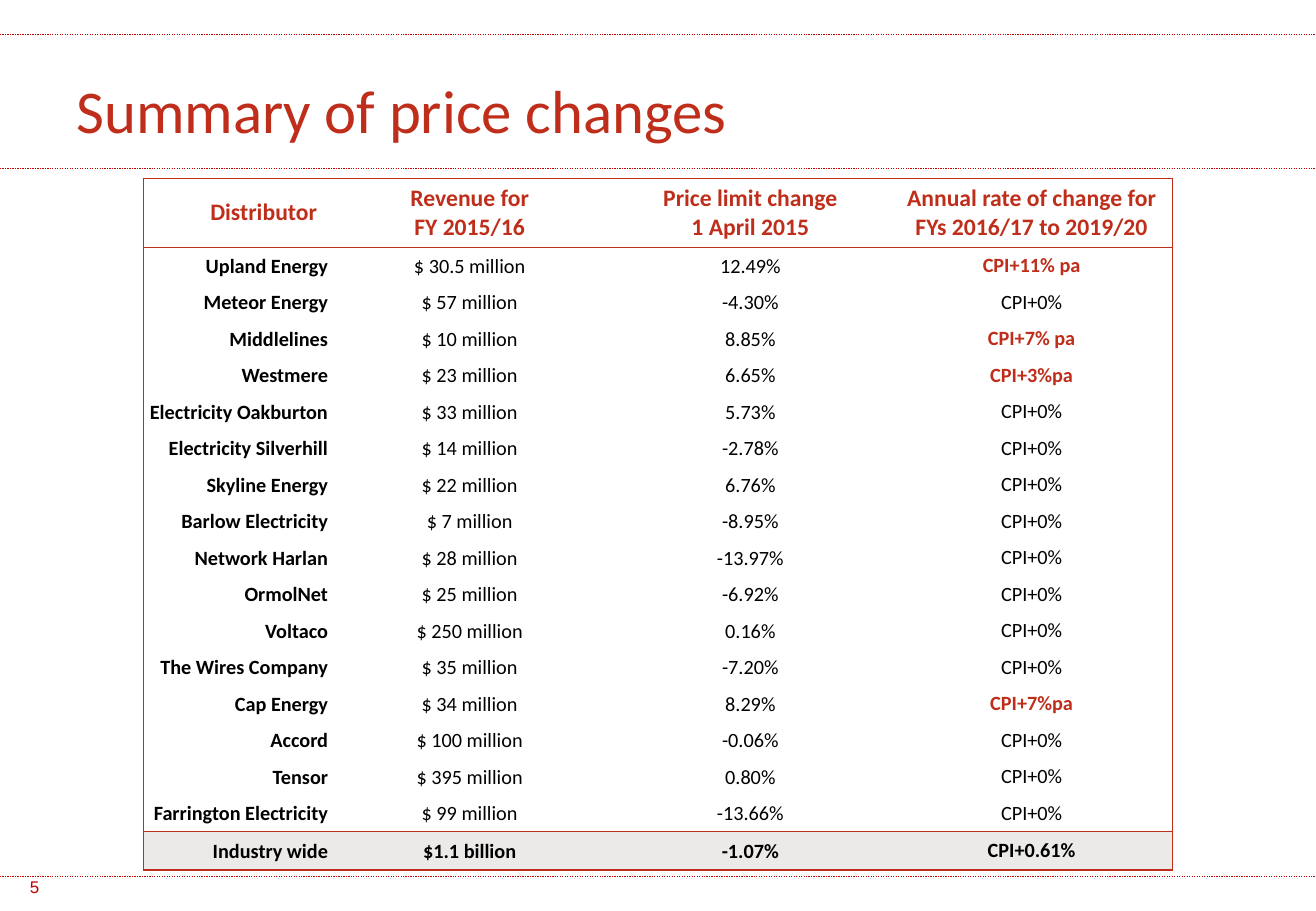
from dataclasses import dataclass

from lxml import etree
from pptx import Presentation
from pptx.dml.color import RGBColor
from pptx.enum.dml import MSO_LINE
from pptx.enum.shapes import MSO_CONNECTOR
from pptx.enum.text import MSO_ANCHOR, PP_ALIGN
from pptx.oxml.ns import qn
from pptx.slide import Slide
from pptx.table import _Cell
from pptx.util import Inches, Length, Pt

LEFT, CENTER, RIGHT = PP_ALIGN.LEFT, PP_ALIGN.CENTER, PP_ALIGN.RIGHT
MIDDLE = MSO_ANCHOR.MIDDLE
DOTTED = MSO_LINE.ROUND_DOT
STRAIGHT = MSO_CONNECTOR.STRAIGHT

ACCENT = RGBColor(0xBF, 0x2E, 0x1A)
RULE = RGBColor(0xC0, 0x00, 0x00)
BLACK = RGBColor(0x00, 0x00, 0x00)
TOTAL_FILL = RGBColor(0xEB, 0xEA, 0xE8)

SLIDE_W, SLIDE_H = Inches(10.83), Inches(7.5)
RULE_ROWS = (3.8, 18.53, 96.2)
COLUMNS = (14.13, 21.33, 21.33, 21.42)
HEADER_H, BODY_H, TOTAL_H = 7.6, 4, 4.27
TABLE_X, TABLE_Y = 10.9, 19.57
TIGHT = {"margin_left": Inches(0.01), "margin_right": Inches(0.01),
         "margin_top": Inches(0.01), "margin_bottom": 0}


@dataclass(frozen=True)
class Label:
    text: str
    x: float
    y: float
    w: float
    h: float
    align: PP_ALIGN
    font: dict
    frame: dict


@dataclass(frozen=True)
class Distributor:
    name: str
    revenue: str
    limit: str
    rate: str = "CPI+0%"

    def cells(self) -> tuple[str, ...]:
        return self.name, self.revenue, self.limit, self.rate


LABELS = (
    Label("Summary of price changes", 4.89, 8, 72.02, 6.67, LEFT,
          {"name": "Calibri", "size": Pt(36), "color": ACCENT},
          {"margin_top": Inches(0.1), "margin_bottom": 0}),
    Label("5", 0, 94.67, 5.26, 5.33, CENTER,
          {"name": "Arial", "size": Pt(10), "color": RULE}, {}),
)

HEADER = Distributor("Distributor", "Revenue for\vFY 2015/16",
                     "Price limit change\v1 April 2015",
                     "Annual rate of change for FYs 2016/17 to 2019/20")
DISTRIBUTORS = (
    Distributor("Upland Energy", "$ 30.5 million", "12.49%", "CPI+11% pa"),
    Distributor("Meteor Energy", "$ 57 million", "-4.30%"),
    Distributor("Middlelines", "$ 10 million", "8.85%", "CPI+7% pa"),
    Distributor("Westmere", "$ 23 million", "6.65%", "CPI+3%pa"),
    Distributor("Electricity Oakburton", "$ 33 million", "5.73%"),
    Distributor("Electricity Silverhill", "$ 14 million", "-2.78%"),
    Distributor("Skyline Energy", "$ 22 million", "6.76%"),
    Distributor("Barlow Electricity", "$ 7 million", "-8.95%"),
    Distributor("Network Harlan", "$ 28 million", "-13.97%"),
    Distributor("OrmolNet", "$ 25 million", "-6.92%"),
    Distributor("Voltaco", "$ 250 million", "0.16%"),
    Distributor("The Wires Company", "$ 35 million", "-7.20%"),
    Distributor("Cap Energy", "$ 34 million", "8.29%", "CPI+7%pa"),
    Distributor("Accord", "$ 100 million", "-0.06%"),
    Distributor("Tensor", "$ 395 million", "0.80%"),
    Distributor("Farrington Electricity", "$ 99 million", "-13.66%"),
)
TOTAL = Distributor("Industry wide", "$1.1 billion", "-1.07%", "CPI+0.61%")


def across(percent: float) -> Length:
    return Length(round(SLIDE_W * percent / 100))


def down(percent: float) -> Length:
    return Length(round(SLIDE_H * percent / 100))


def write(tf, text: str, align: PP_ALIGN, font: dict) -> None:
    p = tf.paragraphs[0]
    p.text = text
    p.alignment = align
    for r in p.runs:
        for key, value in font.items():
            if key == "color":
                r.font.color.rgb = value
            else:
                setattr(r.font, key, value)


def draw_rule(s: Slide, row: float) -> None:
    line = s.shapes.add_connector(STRAIGHT, 0, down(row), SLIDE_W, down(row))
    line.line.color.rgb = RULE
    line.line.width = Pt(0.75)
    line.line.dash_style = DOTTED
    etree.SubElement(line._element.spPr, qn("a:effectLst"))


def draw_label(s: Slide, label: Label) -> None:
    sp = s.shapes.add_textbox(across(label.x), down(label.y),
                              across(label.w), down(label.h))
    tf = sp.text_frame
    for key, value in {"word_wrap": True, "vertical_anchor": MIDDLE, **label.frame}.items():
        setattr(tf, key, value)
    write(tf, label.text, label.align, label.font)


def draw_borders(cell: _Cell, edges: dict[str, bool]) -> None:
    props = cell._tc.get_or_add_tcPr()
    for side, shown in edges.items():
        ln = etree.SubElement(props, qn(f"a:ln{side}"), w=str(Pt(1)))
        if shown:
            fill = etree.SubElement(ln, qn("a:solidFill"))
            etree.SubElement(fill, qn("a:srgbClr"), val=str(ACCENT))
        else:
            etree.SubElement(ln, qn("a:noFill"))


def draw_table(s: Slide) -> None:
    rows = (HEADER, *DISTRIBUTORS, TOTAL)
    heights = (HEADER_H, *(BODY_H for _ in DISTRIBUTORS), TOTAL_H)
    last_row, last_col = len(rows) - 1, len(COLUMNS) - 1
    table = s.shapes.add_table(len(rows), len(COLUMNS), across(TABLE_X), down(TABLE_Y),
                               across(sum(COLUMNS)), down(sum(heights))).table
    table.first_row = table.horz_banding = False
    for column, width in zip(table.columns, COLUMNS):
        column.width = across(width)
    for i, (row, height) in enumerate(zip(rows, heights)):
        table.rows[i].height = down(height)
        for j, text in enumerate(row.cells()):
            cell = table.cell(i, j)
            header, total = i == 0, i == last_row
            accent = header or text.endswith("pa")
            draw_borders(cell, {"L": j == 0, "R": j == last_col,
                                "T": i in (0, 1, last_row),
                                "B": i in (0, last_row - 1, last_row)})
            if total:
                cell.fill.solid()
                cell.fill.fore_color.rgb = TOTAL_FILL
            else:
                cell.fill.background()
            margins = {} if header or j == last_col else TIGHT
            for key, value in {"vertical_anchor": MIDDLE, **margins}.items():
                setattr(cell, key, value)
            write(cell.text_frame, text, RIGHT if j == 0 else CENTER,
                  {"name": "Calibri", "size": Pt(14 if header else 12),
                   "bold": accent or total or j == 0,
                   "color": ACCENT if accent else BLACK})


def main() -> None:
    prs = Presentation()
    prs.slide_width, prs.slide_height = SLIDE_W, SLIDE_H
    s = prs.slides.add_slide(prs.slide_layouts[6])
    for row in RULE_ROWS:
        draw_rule(s, row)
    for label in LABELS:
        draw_label(s, label)
    draw_table(s)
    prs.save("out.pptx")


if __name__ == "__main__":
    main()
